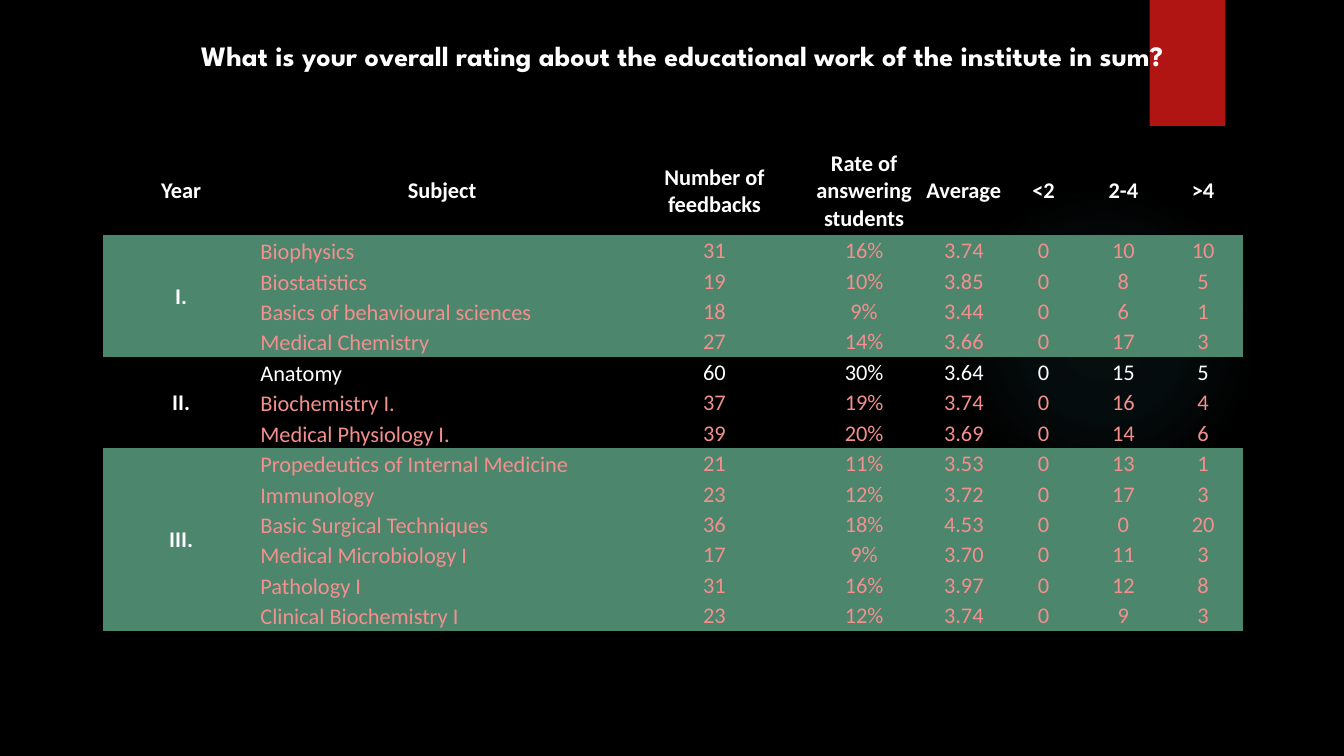
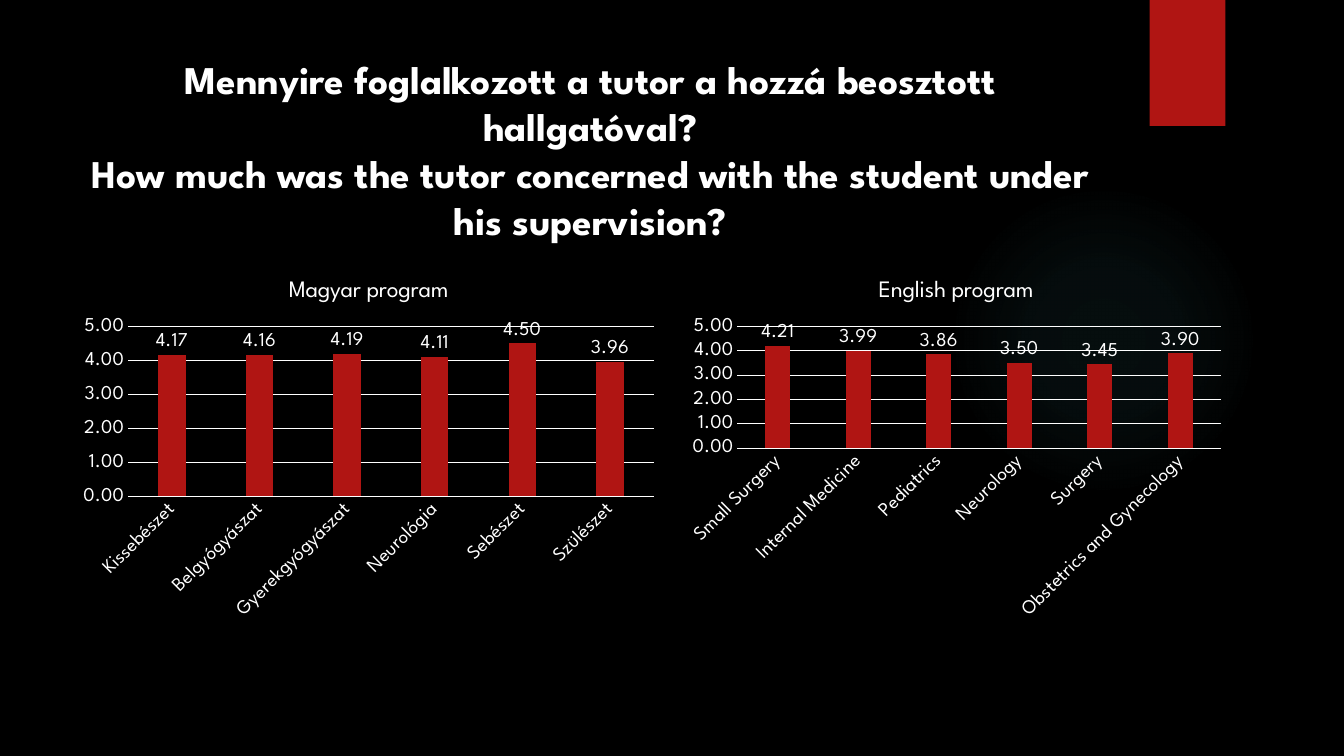
from dataclasses import dataclass

from lxml import etree
from pptx import Presentation
from pptx.chart.data import CategoryChartData
from pptx.dml.color import RGBColor
from pptx.enum.chart import XL_CHART_TYPE, XL_LABEL_POSITION, XL_TICK_MARK
from pptx.enum.shapes import MSO_SHAPE
from pptx.enum.text import MSO_ANCHOR, PP_ALIGN
from pptx.oxml.ns import qn
from pptx.util import Emu, Pt

COLUMN_CHART = XL_CHART_TYPE.COLUMN_CLUSTERED
LABEL_ABOVE = XL_LABEL_POSITION.OUTSIDE_END
NO_TICK = XL_TICK_MARK.NONE
RECTANGLE, ELLIPSE = MSO_SHAPE.RECTANGLE, MSO_SHAPE.OVAL
LEFT, CENTER = PP_ALIGN.LEFT, PP_ALIGN.CENTER
TOP, MIDDLE, BOTTOM = MSO_ANCHOR.TOP, MSO_ANCHOR.MIDDLE, MSO_ANCHOR.BOTTOM

BLACK, WHITE, RED = "000000", "FFFFFF", "B01513"
GREEN, PINK, TEAL = "4B866D", "F38F8D", "50B9C1"
HEADING_FONT, TABLE_FONT = "League Spartan", "Calibri"
GLOW_STOPS = ((0, 7), (36, 6), (69, 0))  # position and opacity, percent
PLAIN_TABLE_STYLE = "{2D5ABB26-0587-4C30-8999-92F81FD0307C}"
HEADER_HEIGHT, ROW_HEIGHT = 85, 29
COLUMN_WIDTHS = (149, 348, 171, 114, 76, 76, 76, 76)
HEADERS = ("Year", "Subject", "Number of feedbacks", "Rate of answering students",
           "Average", "<2", "2-4", ">4")


@dataclass(frozen=True)
class Box:
    left: int
    top: int
    width: int
    height: int

    def emu(self) -> tuple:
        return px(self.left), px(self.top), px(self.width), px(self.height)


@dataclass(frozen=True)
class YearGroup:
    year: str
    fill: str | None
    rows: tuple


@dataclass(frozen=True)
class RatingChart:
    title: str
    box: Box
    ratings: dict


YEAR_GROUPS = (
    YearGroup("I.", GREEN, (
        ("Biophysics", "31", "16%", "3.74", "0", "10", "10"),
        ("Biostatistics", "19", "10%", "3.85", "0", "8", "5"),
        ("Basics of behavioural sciences", "18", "9%", "3.44", "0", "6", "1"),
        ("Medical Chemistry", "27", "14%", "3.66", "0", "17", "3"),
    )),
    YearGroup("II.", None, (
        ("Anatomy", "60", "30%", "3.64", "0", "15", "5"),
        ("Biochemistry I.", "37", "19%", "3.74", "0", "16", "4"),
        ("Medical Physiology I.", "39", "20%", "3.69", "0", "14", "6"),
    )),
    YearGroup("III.", GREEN, (
        ("Propedeutics of Internal Medicine", "21", "11%", "3.53", "0", "13", "1"),
        ("Immunology", "23", "12%", "3.72", "0", "17", "3"),
        ("Basic Surgical Techniques", "36", "18%", "4.53", "0", "0", "20"),
        ("Medical Microbiology I", "17", "9%", "3.70", "0", "11", "3"),
        ("Pathology I", "31", "16%", "3.97", "0", "12", "8"),
        ("Clinical Biochemistry I", "23", "12%", "3.74", "0", "9", "3"),
    )),
)
HIGHLIGHTED_SUBJECT = "Anatomy"

CHARTS = (
    RatingChart("Magyar program", Box(68, 250, 566, 347), {
        "Kissebészet": 4.17, "Belgyógyászat": 4.16, "Gyerekgyógyászat": 4.19,
        "Neurológia": 4.11, "Sebészet": 4.5, "Szülészet": 3.96}),
    RatingChart("English program", Box(648, 250, 525, 347), {
        "Small Surgery": 4.21, "Internal Medicine": 3.99, "Pediatrics": 3.86,
        "Neurology": 3.5, "Surgery": 3.45, "Obstetrics and Gynecology": 3.9}),
)


def px(length: int) -> Emu:
    return Emu(length * 9525)


def color(value: str) -> RGBColor:
    return RGBColor.from_string(value)


def format_font(font, size: float, name: str, ink: str = WHITE, bold: bool = False) -> None:
    font.size, font.name, font.bold = Pt(size), name, bold
    font.color.rgb = color(ink)


def write_text(frame, text: str, *, size: float, font: str, ink: str = WHITE,
               bold: bool = False, align=CENTER) -> None:
    """Fill the first paragraph; a newline becomes a line break."""
    paragraph = frame.paragraphs[0]
    paragraph.text = text
    paragraph.alignment = align
    for run in paragraph.runs:
        format_font(run.font, size, font, ink, bold)


def add_plain_shape(slide, preset, box: Box, fill: str):
    shape = slide.shapes.add_shape(preset, *box.emu())
    shape.shadow.inherit = False
    shape.fill.solid()
    shape.fill.fore_color.rgb = color(fill)
    shape.line.fill.background()
    return shape


def apply_glow(shape) -> None:
    """Replace the solid fill by a circular, fading gradient."""
    gradient = etree.Element(qn("a:gradFill"), rotWithShape="1")
    stops = etree.SubElement(gradient, qn("a:gsLst"))
    for position, opacity in GLOW_STOPS:
        stop = etree.SubElement(stops, qn("a:gs"), pos=str(position * 1000))
        stop_color = etree.SubElement(stop, qn("a:srgbClr"), val=TEAL)
        etree.SubElement(stop_color, qn("a:alpha"), val=str(opacity * 1000))
    center = etree.SubElement(gradient, qn("a:path"), path="circle")
    etree.SubElement(center, qn("a:fillToRect"),
                     {side: "50000" for side in "ltrb"})
    properties = shape.element.spPr
    properties.replace(properties.find(qn("a:solidFill")), gradient)


def add_base_slide(presentation):
    """Blank slide with the glow and the red tab."""
    slide = presentation.slides.add_slide(presentation.slide_layouts[6])
    slide.background.fill.solid()
    slide.background.fill.fore_color.rgb = color(BLACK)
    apply_glow(add_plain_shape(slide, ELLIPSE, Box(903, 176, 296, 296), TEAL))
    add_plain_shape(slide, RECTANGLE, Box(1095, 0, 72, 120), RED)
    return slide


def add_title(slide, text: str, box: Box, size: int) -> None:
    frame = slide.shapes.add_textbox(*box.emu()).text_frame
    frame.word_wrap = True
    frame.vertical_anchor = TOP
    write_text(frame, text, size=size, font=HEADING_FONT, bold=True)


def fill_cell(cell, text: str, *, fill: str | None = None, ink: str = WHITE,
              bold: bool = False, align=CENTER, anchor=MIDDLE) -> None:
    cell.margin_left = cell.margin_right = cell.margin_top = px(1)
    cell.margin_bottom = px(0)
    cell.vertical_anchor = anchor
    if fill:
        cell.fill.solid()
        cell.fill.fore_color.rgb = color(fill)
    else:
        cell.fill.background()
    write_text(cell.text_frame, text, size=16, font=TABLE_FONT, ink=ink,
               bold=bold, align=align)


def add_rating_table(slide) -> None:
    row_count = sum(len(group.rows) for group in YEAR_GROUPS)
    box = Box(98, 139, sum(COLUMN_WIDTHS), HEADER_HEIGHT + row_count * ROW_HEIGHT)
    table = slide.shapes.add_table(row_count + 1, len(HEADERS), *box.emu()).table
    table.first_row = table.horz_banding = False
    table._tbl.tblPr.find(qn("a:tableStyleId")).text = PLAIN_TABLE_STYLE
    for column, width in zip(table.columns, COLUMN_WIDTHS):
        column.width = px(width)
    for index, row in enumerate(table.rows):
        row.height = px(ROW_HEIGHT if index else HEADER_HEIGHT)

    # Header row
    for index, header in enumerate(HEADERS):
        fill_cell(table.cell(0, index), header, bold=True)

    # One merged year cell for each group, then its subjects
    first = 1
    for group in YEAR_GROUPS:
        last = first + len(group.rows) - 1
        table.cell(first, 0).merge(table.cell(last, 0))
        fill_cell(table.cell(first, 0), group.year, fill=group.fill, bold=True)
        for row_index, (subject, *numbers) in enumerate(group.rows, first):
            ink = WHITE if subject == HIGHLIGHTED_SUBJECT else PINK
            fill_cell(table.cell(row_index, 1), subject, fill=group.fill, ink=ink,
                      align=LEFT, anchor=BOTTOM)
            for column_index, number in enumerate(numbers, 2):
                fill_cell(table.cell(row_index, column_index), number,
                          fill=group.fill, ink=ink)
        first = last + 1


def format_line(line) -> None:
    line.color.rgb = color(WHITE)
    line.width = Pt(0.75)


def add_rating_chart(slide, rating: RatingChart) -> None:
    data = CategoryChartData(number_format="0.00")
    data.categories = list(rating.ratings)
    data.add_series("Series 1", list(rating.ratings.values()))
    chart = slide.shapes.add_chart(COLUMN_CHART, *rating.box.emu(), data).chart
    format_font(chart.font, 14, HEADING_FONT)
    chart.has_legend = False
    chart.has_title = True
    write_text(chart.chart_title.text_frame, rating.title, size=16.8, font=HEADING_FONT)
    chart.chart_title.include_in_layout = False

    # Axes
    category_axis, value_axis = chart.category_axis, chart.value_axis
    for axis in (category_axis, value_axis):
        axis.major_tick_mark = axis.minor_tick_mark = NO_TICK
        format_font(axis.tick_labels.font, 14, HEADING_FONT)
    format_line(category_axis.format.line)
    category_axis._element.txPr.find(qn("a:bodyPr")).set("rot", "-2700000")
    value_axis.minimum_scale, value_axis.maximum_scale = 0, 5
    value_axis.major_unit = 1
    value_axis.format.line.fill.background()
    value_axis.has_major_gridlines = True
    format_line(value_axis.major_gridlines.format.line)
    value_axis.tick_labels.number_format = "0.00"
    value_axis.tick_labels.number_format_is_linked = False

    # Columns and their labels
    plot = chart.plots[0]
    plot.gap_width, plot.overlap = 219, -27
    plot.vary_by_categories = False
    series = plot.series[0]
    series.format.fill.solid()
    series.format.fill.fore_color.rgb = color(RED)
    labels = series.data_labels
    labels.show_value = True
    labels.position = LABEL_ABOVE
    labels.number_format = "0.00"
    labels.number_format_is_linked = False
    format_font(labels.font, 14, HEADING_FONT)


def main() -> None:
    presentation = Presentation()
    presentation.slide_width, presentation.slide_height = px(1280), px(720)

    # Overall rating table
    slide = add_base_slide(presentation)
    add_title(slide, "What is your overall rating about the educational work "
              "of the institute in sum?", Box(10, 32, 1280, 42), 20)
    add_rating_table(slide)

    # Tutor rating charts
    slide = add_base_slide(presentation)
    for rating in CHARTS:
        add_rating_chart(slide, rating)
    add_title(slide, "Mennyire foglalkozott a tutor a hozzá beosztott hallgatóval?\n"
              "How much was the tutor concerned with the student under his supervision?",
              Box(68, 48, 988, 147), 28)

    presentation.save("out.pptx")


if __name__ == "__main__":
    main()
